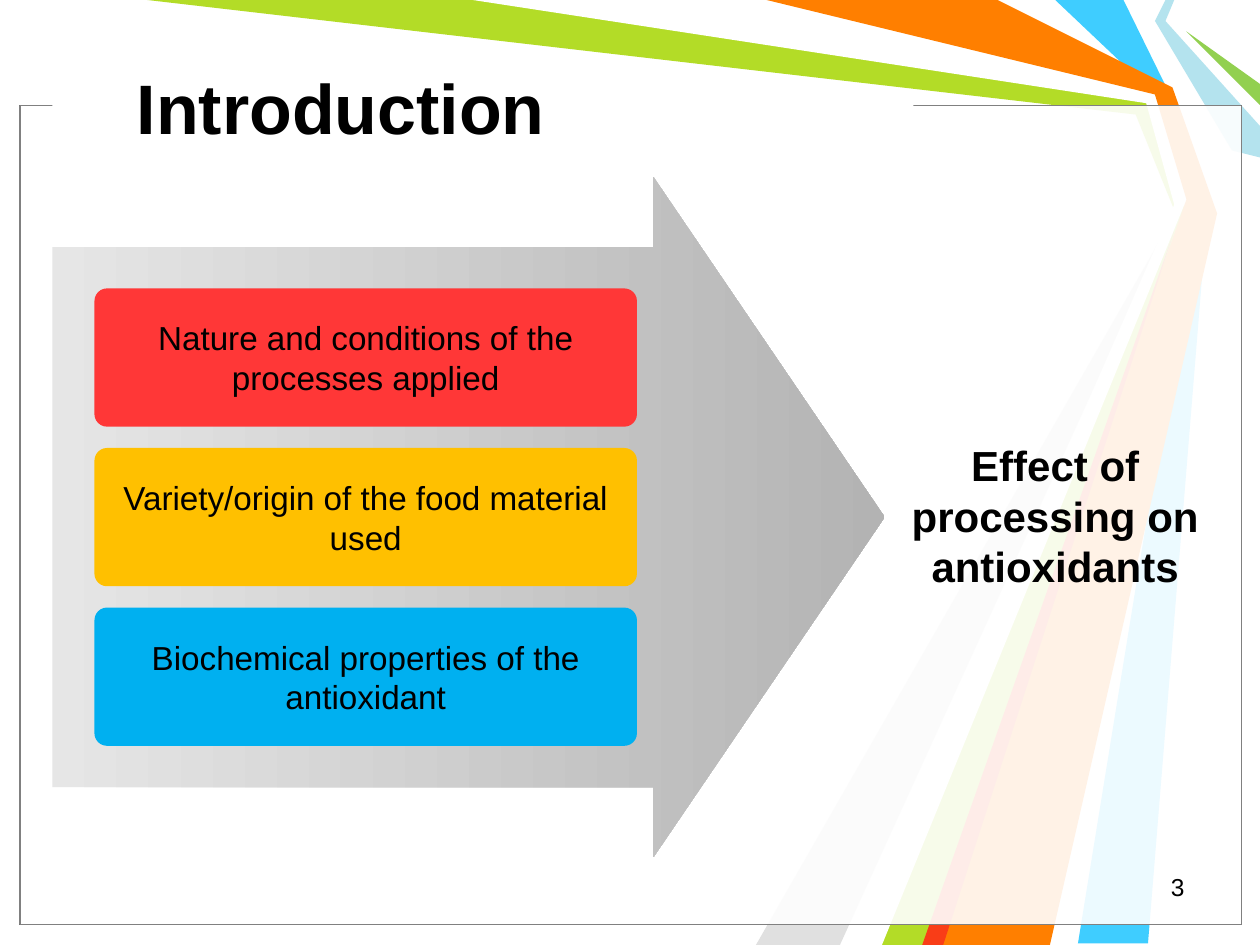
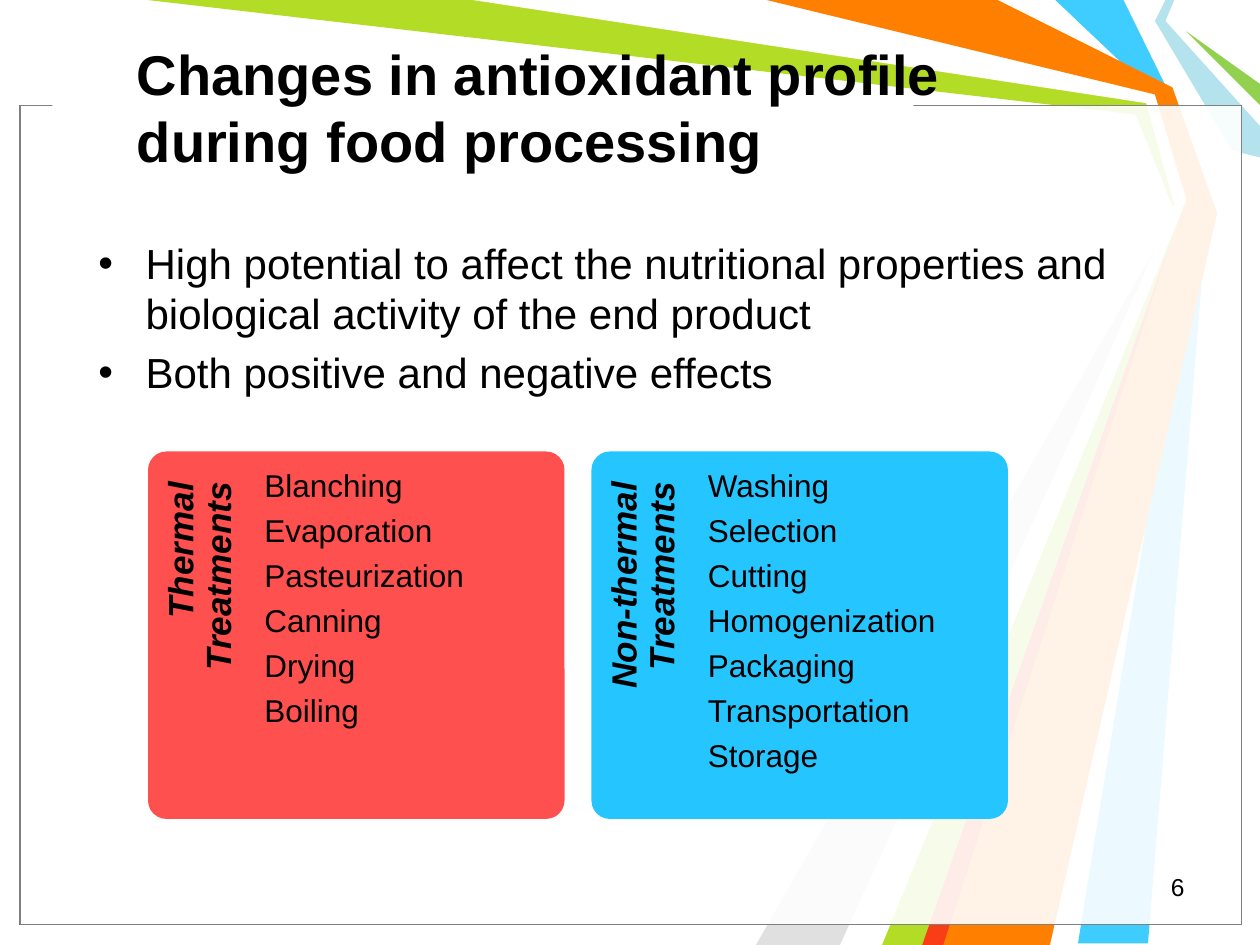
from lxml import etree
from pptx import Presentation
from pptx import util as u
from pptx.dml.color import RGBColor
from pptx.enum import shapes, text
from pptx.oxml import ns

FONT = "Arial"
BLACK = "000000"
WHITE = "FFFFFF"
TITLE_BOX = (71, 16, 496, 90)
NUMBER_BOX = (516, 494.5, 168, 24)
FRAME_BOX = (11.5, 60.5, 698, 468)
TITLE_BAND_BOX = (30, 53, 492, 12.5)
RIBBONS = [
    ("3FCDFF", [(642, 0), (669, 55), (690, 120), (656, 539), (616, 539),
                (684, 120), (660, 54), (603, 0)]),
    ("B3DC27", [(84, 0), (276, 0), (658, 56), (678, 122), (534, 540),
                (498, 540), (673, 125), (649, 65.5)]),
    ("E0E0E0", [(480, 540), (667, 130), (432, 540)]),
    (WHITE, [(270, 0), (655, 59), (671, 117), (486, 540), (504, 540),
             (678, 114), (660, 54), (432, 0)]),
    ("B4E3EE", [(666, 0), (660, 12), (704, 86), (720, 90), (720, 72),
                (666, 12), (671, 0)]),
    ("92D050", [(720, 60), (678, 18), (720, 48)]),
    ("FF7F00", [(438, 0), (570, 0), (670, 50), (695.5, 122), (600, 540),
                (528, 540), (678, 114), (660, 54)]),
    ("F93D17", [(527, 540), (671, 132), (539, 540)]),
]


def colour(value):
    return RGBColor.from_string(value)


def points(values):
    return [u.Pt(value) for value in values]


def paint(shape, fill=None, line=None):
    shape.shadow.inherit = False
    if fill:
        shape.fill.solid()
        shape.fill.fore_color.rgb = colour(fill)
    if line:
        shape.line.color.rgb = colour(line)
        shape.line.width = u.Pt(0.75)
    else:
        shape.line.fill.background()


def add_preset(page, kind, box, fill=None, line=None):
    shape = page.shapes.add_shape(kind, *points(box))
    paint(shape, fill, line)
    return shape


def write(shape, lines, size, align=text.PP_ALIGN.LEFT, bold=False, italic=False,
          anchor=text.MSO_ANCHOR.TOP, insets=None, before=None, after=None, spacing=None):
    frame = shape.text_frame
    frame.word_wrap = True
    frame.auto_size = text.MSO_AUTO_SIZE.NONE
    frame.vertical_anchor = anchor
    if insets:
        (frame.margin_left, frame.margin_top,
         frame.margin_right, frame.margin_bottom) = points(insets)
    for index, line in enumerate(lines):
        para = frame.add_paragraph() if index else frame.paragraphs[0]
        para.text = line
        para.alignment = align
        para.space_before = u.Pt(before if index and before else 0)
        if after:
            para.space_after = u.Pt(after)
        if spacing:
            para.line_spacing = spacing
        para.font.name = FONT
        para.font.size = u.Pt(size)
        para.font.bold = bold
        para.font.italic = italic
        para.font.color.rgb = colour(BLACK)


def add_text(page, box, lines, size, **style):
    write(page.shapes.add_textbox(*points(box)), lines, size, **style)


def move(shape, box):
    shape.left, shape.top, shape.width, shape.height = points(box)


def draw_backdrop(page):
    parts = []
    for fill, (start, *corners) in RIBBONS:
        builder = page.shapes.build_freeform(*points(start))
        builder.add_line_segments([points(corner) for corner in corners], close=True)
        ribbon = builder.convert_to_shape()
        paint(ribbon, fill)
        parts.append(ribbon)
    for line in (BLACK, "808080"):
        veil = add_preset(page, shapes.MSO_SHAPE.RECTANGLE, FRAME_BOX, WHITE, line)
        fill_colour = veil.element.spPr.find(ns.qn("a:solidFill"))[0]
        etree.SubElement(fill_colour, ns.qn("a:alpha"), val="69000")
        parts.append(veil)
    parts.append(add_preset(page, shapes.MSO_SHAPE.RECTANGLE, TITLE_BAND_BOX, WHITE))
    return parts


def move_to_master(deck, parts):
    tree = deck.slide_master.shapes.element
    for index, part in enumerate(parts):
        part.element.xpath(".//p:cNvPr")[0].set("id", str(100 + index))
        tree.insert(2 + index, part.element)


def add_page(deck, layout, title, title_size, number):
    page = deck.slides.add_slide(deck.slide_layouts[layout])
    move(page.shapes.title, TITLE_BOX)
    write(page.shapes.title, [title], title_size, bold=True, anchor=text.MSO_ANCHOR.MIDDLE)
    add_text(page, NUMBER_BOX, [number], 14, align=text.PP_ALIGN.RIGHT)
    return page


def draw_factor_arrow(page, box, factors):
    left, top, width, height = box
    arrow = add_preset(page, shapes.MSO_SHAPE.RIGHT_ARROW, box)
    arrow.adjustments[0], arrow.adjustments[1] = 0.793, 0.34
    arrow.fill.gradient()
    arrow.fill.gradient_angle = 0
    for stop, shade, position in zip(arrow.fill.gradient_stops, ("E6E6E6", "B3B3B3"), (0, 1)):
        stop.color.rgb = colour(shade)
        stop.position = position
    card_height, gap = 79, 12.2
    stack_height = len(factors) * (card_height + gap) - gap
    first_top = top + (height - stack_height) / 2
    for index, (label, fill) in enumerate(factors):
        card_box = (left + 24, first_top + index * (card_height + gap), 310, card_height)
        card = add_preset(page, shapes.MSO_SHAPE.ROUNDED_RECTANGLE, card_box, fill)
        card.adjustments[0] = 0.091
        write(card, [label], 19, align=text.PP_ALIGN.CENTER, anchor=text.MSO_ANCHOR.MIDDLE)


def draw_treatment_panel(page, box, heading, treatments, fill):
    left, top, width, height = box
    panel = add_preset(page, shapes.MSO_SHAPE.ROUNDED_RECTANGLE, box, fill)
    panel.adjustments[0] = 0.05
    write(panel, [heading], 20, align=text.PP_ALIGN.RIGHT, bold=True, italic=True,
          insets=(5.5, 14.4, 170, 20), spacing=0.9)
    panel.text_frame._txBody.bodyPr.set("vert", "vert270")
    add_text(page, (left + 66.5, top + 5.5, 149, height - 12), treatments, 18,
             insets=(0, 5, 0, 0), after=6.3, spacing=0.9)


def build_introduction(deck):
    page = add_page(deck, 5, "Introduction", 40, "3")
    move_to_master(deck, draw_backdrop(page))
    draw_factor_arrow(page, (30, 101, 475.5, 389), [
        ("Nature and conditions of the processes applied", "FF3737"),
        ("Variety/origin of the food material used", "FFC000"),
        ("Biochemical properties of the antioxidant", "00B0F0"),
    ])
    add_text(page, (498, 243.5, 210, 102), ["Effect of processing on antioxidants"], 24,
             align=text.PP_ALIGN.CENTER, bold=True, anchor=text.MSO_ANCHOR.MIDDLE)


def build_changes(deck):
    page = add_page(deck, 1, "Changes in antioxidant profile during food processing", 32, "6")
    body = page.placeholders[1]
    move(body, (49, 132, 616, 108))
    write(body, [
        "High potential to affect the nutritional properties and biological activity "
        "of the end product",
        "Both positive and negative effects",
    ], 24, before=4.8)
    panels = [
        ("Thermal Treatments", "FF5050",
         ["Blanching", "Evaporation", "Pasteurization", "Canning", "Drying", "Boiling"]),
        ("Non-thermal Treatments", "25C6FF",
         ["Washing", "Selection", "Cutting", "Homogenization", "Packaging",
          "Transportation", "Storage"]),
    ]
    for index, (heading, fill, treatments) in enumerate(panels):
        box = (84.6 + index * 253.4, 258, 238, 210)
        draw_treatment_panel(page, box, heading, treatments, fill)


def main():
    deck = Presentation()
    deck.slide_width, deck.slide_height = points((720, 540))
    build_introduction(deck)
    build_changes(deck)
    deck.save("out.pptx")


if __name__ == "__main__":
    main()
